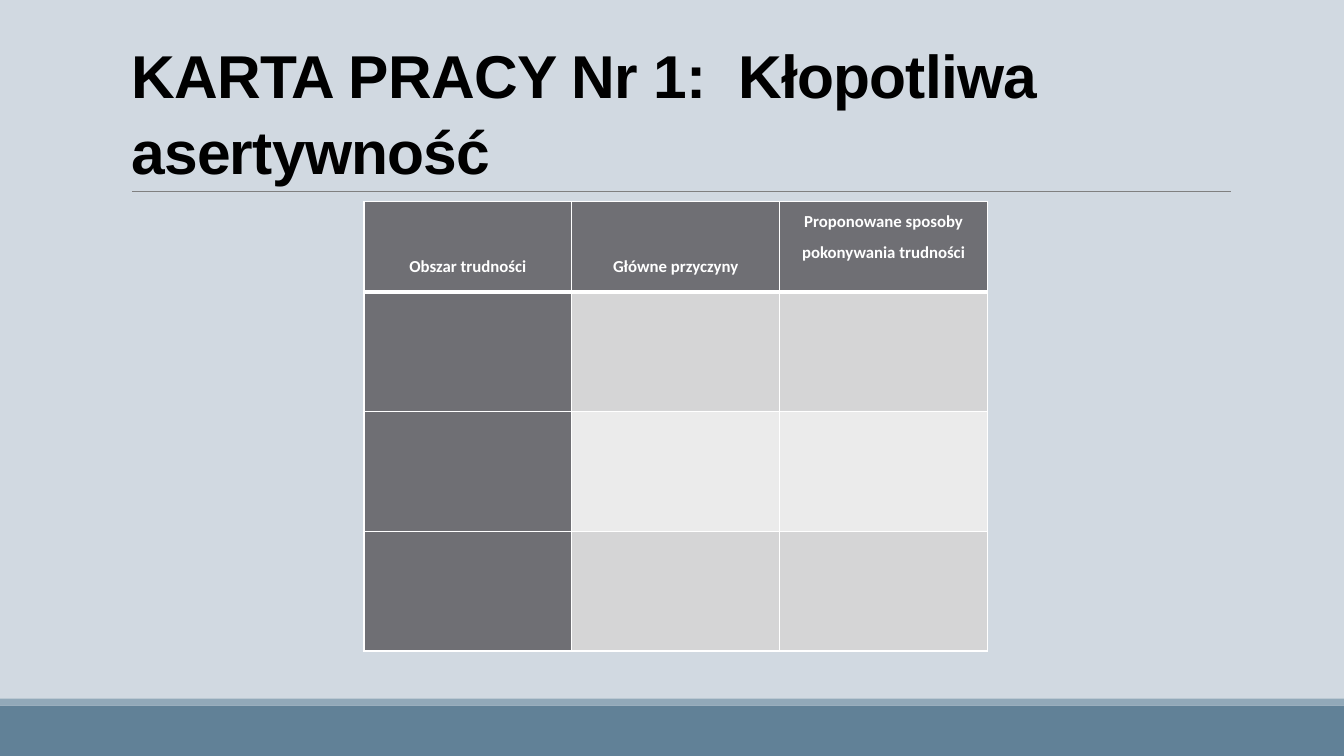
"""Build the worksheet slide on troublesome assertiveness."""
import dataclasses

import pptx
import pptx.dml.color
import pptx.enum.shapes
import pptx.enum.text
import pptx.oxml
import pptx.oxml.ns
import pptx.util

Pt = pptx.util.Pt
SLIDE_WIDTH, SLIDE_HEIGHT = 960, 540
HEADINGS = (
    ("Obszar trudności", 32),
    ("Główne przyczyny", 32),
    ("Proponowane sposoby pokonywania trudności", 0),
)
ROW_HEIGHTS = (64.5, 85.5, 85.5, 85.5)
COLUMN_WIDTH = 148.5


def rgb(value):
    """Return the colour for a hexadecimal value."""
    return pptx.dml.color.RGBColor.from_string(value)


def apply(target, values):
    """Set each named attribute on the target."""
    for name, value in values.items():
        setattr(target, name, value)


@dataclasses.dataclass(frozen=True)
class Theme:
    """Colours, fonts and type sizes of the slide."""

    background: str = "D1D9E1"
    footer: str = "618197"
    footer_edge: str = "92A9B9"
    rule: str = "808080"
    title: str = "000000"
    header: str = "6F6F74"
    bands: tuple = ("D5D5D6", "EBEBEB")
    white: str = "FFFFFF"
    title_font: str = "Arial"
    table_font: str = "Calibri"
    title_size: float = 43.2
    table_size: float = 12


class Worksheet:
    """Draw styled elements on one slide."""

    def __init__(self, slide, theme):
        """Keep the slide and theme, and paint the background."""
        self.slide, self.theme = slide, theme
        slide.background.fill.solid()
        slide.background.fill.fore_color.rgb = rgb(theme.background)

    def bar(self, top, height, color):
        """Add a band across the full slide width."""
        band = self.slide.shapes.add_shape(
            pptx.enum.shapes.MSO_SHAPE.RECTANGLE, 0, Pt(top), Pt(SLIDE_WIDTH), Pt(height))
        band.shadow.inherit = False
        band.fill.solid()
        band.fill.fore_color.rgb = rgb(color)
        band.line.fill.background()

    def rule(self, left, right, top):
        """Add the thin line below the title."""
        divider = self.slide.shapes.add_connector(
            pptx.enum.shapes.MSO_CONNECTOR.STRAIGHT, Pt(left), Pt(top), Pt(right), Pt(top))
        divider.line.color.rgb = rgb(self.theme.rule)
        divider.line.width = Pt(0.5)
        divider._element.spPr.append(pptx.oxml.parse_xml(
            f'<a:effectLst {pptx.oxml.ns.nsdecls("a")}/>'))

    def title(self, wording, left, top, width, height):
        """Place and format the title placeholder."""
        heading = self.slide.shapes.title
        apply(heading, {"left": Pt(left), "top": Pt(top),
                        "width": Pt(width), "height": Pt(height)})
        apply(heading.text_frame, {
            "text": wording, "word_wrap": True,
            "auto_size": pptx.enum.text.MSO_AUTO_SIZE.NONE,
            "vertical_anchor": pptx.enum.text.MSO_ANCHOR.BOTTOM})
        line = heading.text_frame.paragraphs[0]
        apply(line, {"alignment": pptx.enum.text.PP_ALIGN.LEFT, "line_spacing": 1.05})
        run = line.runs[0]
        apply(run.font, {"name": self.theme.title_font, "bold": True,
                         "size": Pt(self.theme.title_size)})
        run.font.color.rgb = rgb(self.theme.title)
        run._r.get_or_add_rPr().set("spc", "-50")

    def borders(self, cell, top, bottom):
        """Draw the four white borders of a cell."""
        for side, weight in {"L": 1, "R": 1, "T": top, "B": bottom}.items():
            cell._tc.get_or_add_tcPr().append(pptx.oxml.parse_xml(
                f'<a:ln{side} {pptx.oxml.ns.nsdecls("a")} w="{Pt(weight)}"><a:solidFill>'
                f'<a:srgbClr val="{self.theme.white}"/></a:solidFill></a:ln{side}>'))

    def heading(self, cell, wording, offset):
        """Write a column heading at an offset from the cell top."""
        apply(cell, {"text": wording, "margin_left": Pt(5), "margin_right": Pt(5),
                     "margin_top": Pt(offset), "margin_bottom": 0})
        line = cell.text_frame.paragraphs[0]
        apply(line, {"alignment": pptx.enum.text.PP_ALIGN.CENTER,
                     "line_spacing": 1.5, "space_after": Pt(10)})
        font = line.runs[0].font
        apply(font, {"name": self.theme.table_font, "bold": True,
                     "size": Pt(self.theme.table_size)})
        font.color.rgb = rgb(self.theme.white)

    def table(self, left, top):
        """Add the worksheet grid with its headings."""
        grid = self.slide.shapes.add_table(
            len(ROW_HEIGHTS), len(HEADINGS), Pt(left), Pt(top),
            Pt(COLUMN_WIDTH * len(HEADINGS)), Pt(sum(ROW_HEIGHTS))).table
        for column in grid.columns:
            column.width = Pt(COLUMN_WIDTH)
        for r, height in enumerate(ROW_HEIGHTS):
            grid.rows[r].height = Pt(height)
            for c in range(len(HEADINGS)):
                cell = grid.cell(r, c)
                self.borders(cell, 3 if r == 1 else 1, 3 if r == 0 else 1)
                cell.fill.solid()
                shade = self.theme.bands[(r - 1) % 2] if r and c else self.theme.header
                cell.fill.fore_color.rgb = rgb(shade)
        for c, (wording, offset) in enumerate(HEADINGS):
            self.heading(grid.cell(0, c), wording, offset)


def main():
    """Build and save the presentation."""
    deck = pptx.Presentation()
    apply(deck, {"slide_width": Pt(SLIDE_WIDTH), "slide_height": Pt(SLIDE_HEIGHT)})
    theme = Theme()
    sheet = Worksheet(deck.slides.add_slide(deck.slide_layouts[5]), theme)
    sheet.bar(504, 36, theme.footer)
    sheet.bar(499, 5, theme.footer_edge)
    sheet.rule(94.5, 879, 136.75)
    sheet.title("KARTA PRACY Nr 1:  Kłopotliwa asertywność", 86.5, 22.5, 792, 114.5)
    sheet.table(260, 144)
    deck.save("out.pptx")


if __name__ == "__main__":
    main()
